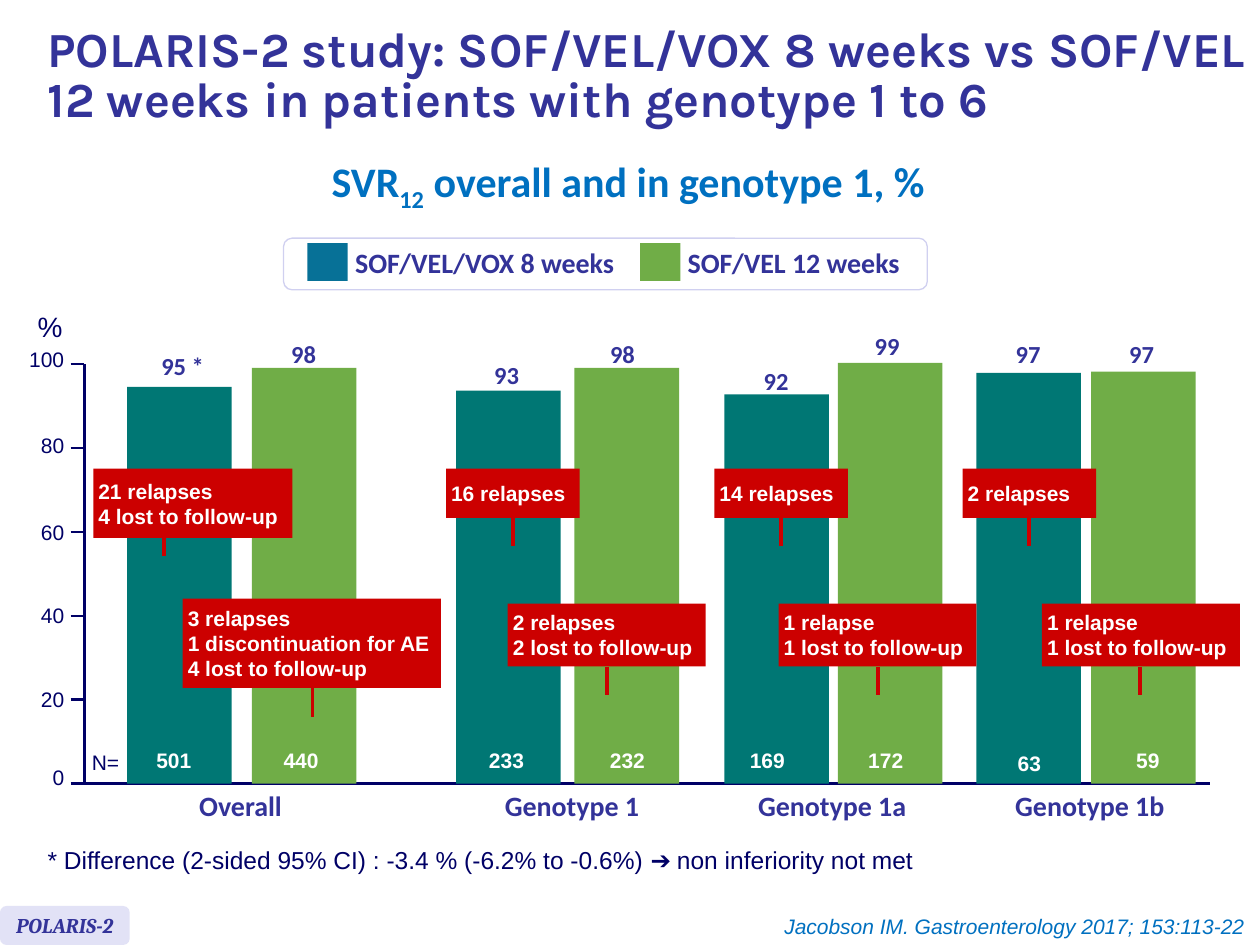
"""Build the POLARIS-2 slide with SVR12 bars overall and in genotype 1."""
from dataclasses import dataclass

from lxml import etree
from pptx import Presentation, util as u
from pptx.dml.color import RGBColor
from pptx.enum import shapes, text
from pptx.oxml.ns import qn

COLORS = {
    "navy": "000066", "indigo": "333399", "blue": "0070C0", "teal": "007774",
    "green": "70AD47", "red": "CC0000", "white": "FFFFFF", "legend": "077197",
    "border": "D0D0F0", "lavender": "E2E2F6",
}
LEFT, CENTER, RIGHT = text.PP_ALIGN.LEFT, text.PP_ALIGN.CENTER, text.PP_ALIGN.RIGHT
RECTANGLE = shapes.MSO_SHAPE.RECTANGLE
ROUNDED = shapes.MSO_SHAPE.ROUNDED_RECTANGLE
BASELINE, AXIS_X, AXIS_TOP = 6.22, 0.67, 2.89
BAR_WIDTH, DIGIT_WIDTH = 0.83, 0.11
NO_INSET, NORMAL_INSET, CALLOUT_INSET = (0, 0), (0.1, 0.05), (0.04, 0.1)


@dataclass(frozen=True)
class Style:
    """Character formatting of a label."""
    size: float
    font: str
    color: str
    bold: bool = False
    italic: bool = False


@dataclass(frozen=True)
class Bar:
    """One bar with its value and patient count."""
    left: float
    height: float
    color: str
    value: str
    value_center: float
    value_top: float
    count: str
    count_center: float
    count_top: float = 5.93


@dataclass(frozen=True)
class Callout:
    """A red box of outcomes with a leader below it."""
    box: tuple
    lines: tuple
    leader_x: float
    leader_end: float


AXIS_STYLE = Style(12, "Arial", "navy")
VALUE_STYLE = Style(14, "Calibri", "indigo", bold=True)
GROUP_STYLE = Style(16, "Calibri", "indigo", bold=True)
WHITE_STYLE = Style(12, "Arial", "white", bold=True)
HEADING_STYLE = Style(24, "Calibri", "blue", bold=True)

BARS = (
    Bar(1.01, 3.15, "teal", "95 *", 1.45, 2.81, "501", 1.38),
    Bar(2.00, 3.30, "green", "98", 2.41, 2.71, "440", 2.39),
    Bar(3.62, 3.12, "teal", "93", 4.02, 2.88, "233", 4.02),
    Bar(4.56, 3.30, "green", "98", 4.94, 2.71, "232", 4.98),
    Bar(5.75, 3.09, "teal", "92", 6.16, 2.93, "169", 6.09),
    Bar(6.65, 3.34, "green", "99", 7.04, 2.65, "172", 7.03),
    Bar(7.75, 3.26, "teal", "97", 8.16, 2.71, "63", 8.17, 5.96),
    Bar(8.66, 3.27, "green", "97", 9.06, 2.71, "59", 9.11),
)
CALLOUTS = (
    Callout((0.74, 3.72, 1.58, 0.55), ("21 relapses", "4 lost to follow-up"), 1.30, 4.41),
    Callout((1.45, 4.75, 2.05, 0.71),
            ("3 relapses", "1 discontinuation for AE", "4 lost to follow-up"), 2.48, 5.69),
    Callout((3.54, 3.72, 1.06, 0.39), ("16 relapses",), 4.07, 4.33),
    Callout((4.03, 4.79, 1.57, 0.50), ("2 relapses", "2 lost to follow-up"), 4.82, 5.52),
    Callout((5.67, 3.72, 1.06, 0.39), ("14 relapses",), 6.20, 4.33),
    Callout((6.18, 4.79, 1.57, 0.50), ("1 relapse", "1 lost to follow-up"), 6.97, 5.52),
    Callout((7.64, 3.72, 1.06, 0.39), ("2 relapses",), 8.17, 4.33),
    Callout((8.27, 4.79, 1.57, 0.50), ("1 relapse", "1 lost to follow-up"), 9.05, 5.52),
)
GROUPS = (("Overall", 1.58, 0.66), ("Genotype 1", 4.00, 1.08),
          ("Genotype 1a", 6.01, 1.19), ("Genotype 1b", 8.05, 1.20))
TICKS = (("0", 6.07), ("20", 5.45), ("40", 4.78), ("60", 4.12), ("80", 3.43), ("100", 2.75))
LEGEND = (("SOF/VEL/VOX 8 weeks", 2.44, "legend", 2.72, 2.79),
          ("SOF/VEL 12 weeks", 5.08, "green", 5.36, 1.91))


def rgb(name: str) -> RGBColor:
    """Return a named colour."""
    return RGBColor.from_string(COLORS[name])


def format_runs(paragraph, style: Style) -> None:
    """Apply a style to every run of a paragraph."""
    for run in paragraph.runs:
        font = run.font
        font.size, font.name = u.Pt(style.size), style.font
        font.bold, font.italic = style.bold, style.italic
        font.color.rgb = rgb(style.color)


def write(shape, content: str, style: Style, align=LEFT, inset=NORMAL_INSET,
          wrap: bool = False, middle: bool = False, spacing=None) -> None:
    """Write and format the text of a shape."""
    frame = shape.text_frame
    frame.text = content
    frame.word_wrap = wrap
    frame.margin_left = frame.margin_right = u.Inches(inset[0])
    frame.margin_top = frame.margin_bottom = u.Inches(inset[1])
    frame.vertical_anchor = text.MSO_ANCHOR.MIDDLE if middle else text.MSO_ANCHOR.TOP
    for paragraph in frame.paragraphs:
        paragraph.alignment = align
        paragraph.line_spacing = spacing
        format_runs(paragraph, style)


def add_label(slide, box: tuple, content: str, style: Style, **options):
    """Add a text box and return it."""
    shape = slide.shapes.add_textbox(*map(u.Inches, box))
    write(shape, content, style, **options)
    return shape


def add_number(slide, center: float, top: float, content: str, style: Style, spacing=None) -> None:
    """Add a short label centred on a point."""
    width = DIGIT_WIDTH * len(content)
    add_label(slide, (center - width / 2, top, width, 0.2), content, style,
              align=CENTER, inset=NO_INSET, spacing=spacing)


def add_block(slide, box: tuple, fill: str, kind=RECTANGLE, line: str = ""):
    """Add a filled shape and return it."""
    shape = slide.shapes.add_shape(kind, *map(u.Inches, box))
    shape.shadow.inherit = False
    shape.fill.solid()
    shape.fill.fore_color.rgb = rgb(fill)
    if line:
        shape.line.color.rgb = rgb(line)
        shape.line.width = u.Pt(0.75)
    else:
        shape.line.fill.background()
    return shape


def add_line(slide, start: tuple, end: tuple, color: str = "navy", width: float = 1.5) -> None:
    """Add a straight line."""
    line = slide.shapes.add_connector(
        shapes.MSO_CONNECTOR.STRAIGHT, *map(u.Inches, start + end))
    line.line.color.rgb = rgb(color)
    line.line.width = u.Pt(width)
    etree.SubElement(line._element.spPr, qn("a:effectLst"))


def add_axes(slide) -> None:
    """Draw both axes with ticks and labels."""
    add_line(slide, (AXIS_X, AXIS_TOP), (AXIS_X, BASELINE))
    add_line(slide, (AXIS_X, BASELINE), (9.6, BASELINE))
    step = (BASELINE - AXIS_TOP) / (len(TICKS) - 1)
    for index, (label, top) in enumerate(TICKS):
        y = BASELINE - index * step
        add_line(slide, (0.56, y), (AXIS_X, y))
        width = DIGIT_WIDTH * len(label)
        add_label(slide, (0.51 - width, top, width, 0.2), label, AXIS_STYLE,
                  align=RIGHT, inset=NO_INSET)
    add_label(slide, (0.2, 2.41, 0.4, 0.37), "%", Style(16, "Arial", "navy"))
    add_label(slide, (0.63, 5.9, 0.42, 0.3), "N=", AXIS_STYLE)
    for label, left, width in GROUPS:
        add_label(slide, (left, 6.26, width, 0.27), label, GROUP_STYLE,
                  align=CENTER, inset=NO_INSET)


def add_bar(slide, bar: Bar) -> None:
    """Draw a bar with its value and count."""
    add_block(slide, (bar.left, BASELINE - bar.height, BAR_WIDTH, bar.height), bar.color)
    add_number(slide, bar.value_center, bar.value_top, bar.value, VALUE_STYLE, u.Pt(15.2))
    add_number(slide, bar.count_center, bar.count_top, bar.count, WHITE_STYLE)


def add_callout(slide, callout: Callout) -> None:
    """Draw a callout box and its leader."""
    bottom = callout.box[1] + callout.box[3]
    add_line(slide, (callout.leader_x, bottom), (callout.leader_x, callout.leader_end), "red", 2.25)
    write(add_block(slide, callout.box, "red"), "\n".join(callout.lines), WHITE_STYLE,
          inset=CALLOUT_INSET, middle=True)


def add_heading(slide) -> None:
    """Add the chart heading with its subscript."""
    shape = add_label(slide, (2.49, 1.43, 4.99, 0.35), "SVR", HEADING_STYLE,
                      align=CENTER, spacing=u.Pt(15.2))
    paragraph = shape.text_frame.paragraphs[0]
    subscript = paragraph.add_run()
    subscript.text = "12"
    paragraph.add_run().text = " overall and in genotype 1, %"
    format_runs(paragraph, HEADING_STYLE)
    subscript.font._element.set("baseline", "-25000")


def add_legend(slide) -> None:
    """Draw the legend frame and entries."""
    add_block(slide, (2.25, 1.89, 5.11, 0.41), "white", ROUNDED, "border")
    for label, swatch_left, color, label_left, width in LEGEND:
        add_block(slide, (swatch_left, 1.93, 0.32, 0.3), color)
        add_label(slide, (label_left, 1.83, width, 0.5), label, GROUP_STYLE, wrap=True, middle=True)


def main() -> None:
    """Build and save the presentation."""
    presentation = Presentation()
    presentation.slide_width, presentation.slide_height = u.Inches(10), u.Inches(7.5)
    slide = presentation.slides.add_slide(presentation.slide_layouts[6])
    add_label(slide, (0.28, 0.08, 9.84, 1.07),
              "POLARIS-2 study: SOF/VEL/VOX 8 weeks vs SOF/VEL 12 weeks in patients with genotype 1 to 6",
              Style(28, "Karla", "indigo", bold=True), wrap=True, middle=True, spacing=0.85)
    add_heading(slide)
    add_legend(slide)
    add_axes(slide)
    for bar in BARS:
        add_bar(slide, bar)
    for callout in CALLOUTS:
        add_callout(slide, callout)
    add_label(slide, (0.28, 6.66, 9.16, 0.5),
              "* Difference (2-sided 95% CI) : -3.4 % (-6.2% to -0.6%) ➔ non inferiority not met",
              Style(14, "Arial", "navy"), wrap=True)
    write(add_block(slide, (0, 7.19, 1.03, 0.31), "lavender", ROUNDED), "POLARIS-2",
          Style(12, "Cambria", "indigo", bold=True, italic=True), align=CENTER, middle=True)
    add_label(slide, (6.04, 7.2, 3.94, 0.3), "Jacobson IM. Gastroenterology 2017; 153:113-22",
              Style(12, "Arial", "blue", italic=True), align=RIGHT)
    presentation.save("out.pptx")


if __name__ == "__main__":
    main()
